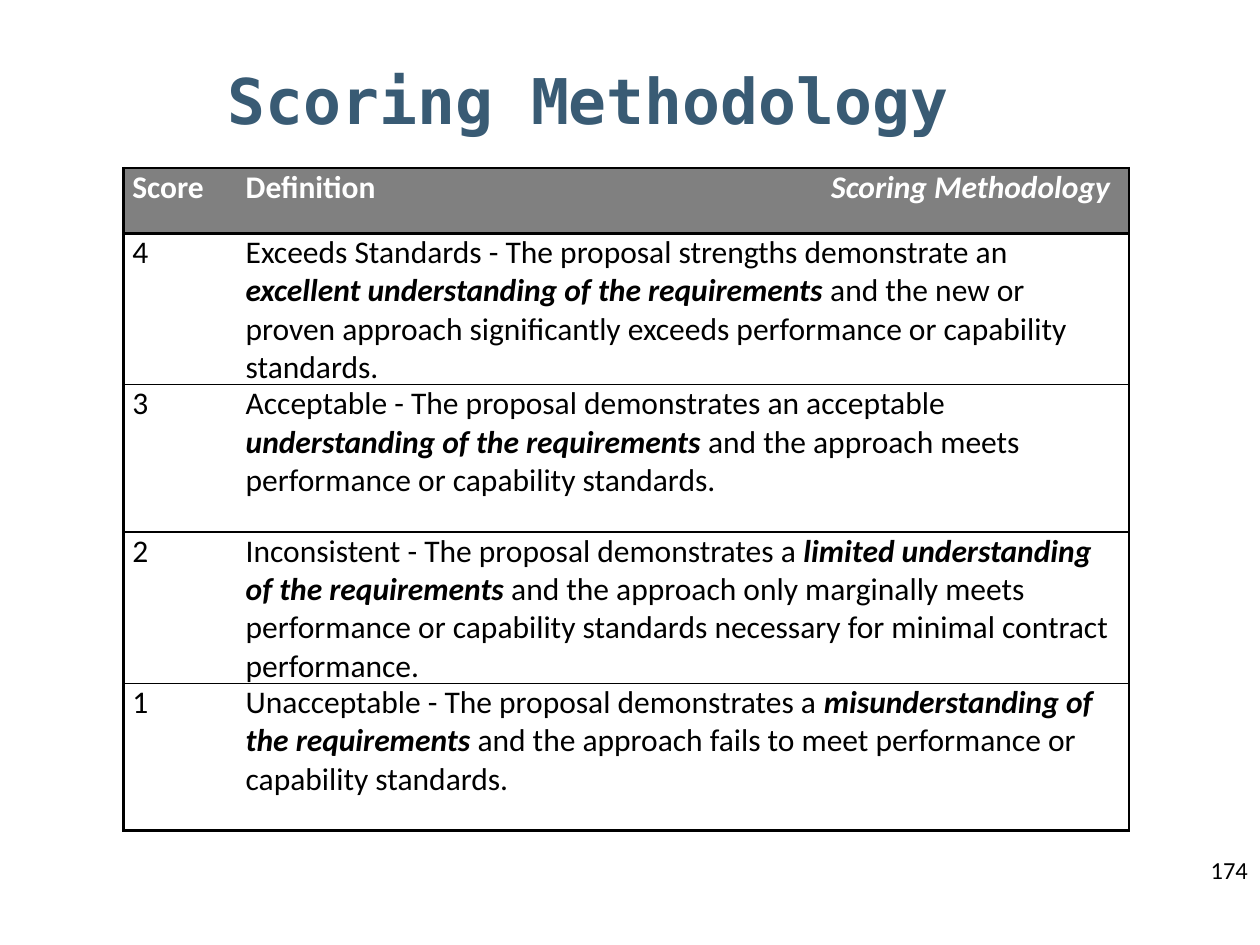
import pptx
import pptx.dml.color
import pptx.enum.text
import pptx.oxml
import pptx.oxml.ns
import pptx.util

Pt = pptx.util.Pt
RGBColor = pptx.dml.color.RGBColor
SubElement = pptx.oxml.xmlchemy.OxmlElement

BLACK = RGBColor(0x00, 0x00, 0x00)
WHITE = RGBColor(0xFF, 0xFF, 0xFF)
HEADER_GRAY = RGBColor(0x80, 0x80, 0x80)
TITLE_BLUE = RGBColor(0x39, 0x5B, 0x74)

BODY_FONT = "Calibri"
TITLE_FONT = "DejaVu Sans Mono"
OUTER, INNER = 1.5, 1
SCORE_WIDTH = 64.8
HEADER_HEIGHT, SCORE_HEIGHT = 37.4, 84.2
CAPTION_TAB = 494

SCORES = [
    ("4", "Exceeds Standards - The proposal strengths demonstrate an ",
     "excellent understanding of the requirements ",
     "and the new or proven approach significantly exceeds performance or "
     "capability standards."),
    ("3", "Acceptable - The proposal demonstrates an acceptable ",
     "understanding of the requirements ",
     "and the approach meets performance or capability standards."),
    ("2", "Inconsistent - The proposal demonstrates a ",
     "limited understanding of the requirements",
     " and the approach only marginally meets performance or capability "
     "standards necessary for minimal contract performance."),
    ("1", "Unacceptable - The proposal demonstrates a ",
     "misunderstanding of the requirements ",
     "and the approach fails to meet performance or capability standards."),
]


def place(shape, box):
    shape.left, shape.top, shape.width, shape.height = map(Pt, box)


def set_font(paragraph, name, size, color):
    paragraph.font.name = name
    paragraph.font.size = Pt(size)
    paragraph.font.color.rgb = color


def add_title(slide, box):
    title = slide.shapes.title
    place(title, box)
    frame = title.text_frame
    frame.text = "Scoring Methodology"
    frame.vertical_anchor = pptx.enum.text.MSO_ANCHOR.MIDDLE
    heading = frame.paragraphs[0]
    heading.alignment = pptx.enum.text.PP_ALIGN.CENTER
    set_font(heading, TITLE_FONT, 36, TITLE_BLUE)
    heading.font.bold = True


def set_borders(cell, **widths):
    properties = cell._tc.get_or_add_tcPr()
    for side in "LRTB":
        line = SubElement("a:ln" + side)
        properties.append(line)
        width = widths.get(side)
        if width is None:
            line.append(SubElement("a:noFill"))
            continue
        line.set("w", str(Pt(width)))
        fill = SubElement("a:solidFill")
        color = SubElement("a:srgbClr")
        color.set("val", str(BLACK))
        fill.append(color)
        line.append(fill)


def add_right_tab(paragraph, position):
    tabs = SubElement("a:tabLst")
    tab = SubElement("a:tab")
    tab.set("pos", str(Pt(position)))
    tab.set("algn", "r")
    tabs.append(tab)
    paragraph._p.get_or_add_pPr().append(tabs)


def fill_cell(cell, runs, color):
    cell.margin_left = cell.margin_right = Pt(5)
    cell.margin_top = cell.margin_bottom = 0
    paragraph = cell.text_frame.paragraphs[0]
    if any("\t" in text for text, _, _ in runs):
        add_right_tab(paragraph, CAPTION_TAB)
    set_font(paragraph, BODY_FONT, 18, color)
    for text, bold, italic in runs:
        run = paragraph.add_run()
        run.text = text
        run.font.bold = bold
        run.font.italic = italic


def add_score_table(slide, box):
    rows = [([("Score", True, False)],
             [("Definition\t", True, False),
              ("Scoring Methodology", True, True)])]
    rows += [([(score, False, False)],
              [(lead, False, False), (key, True, True), (rest, False, False)])
             for score, lead, key, rest in SCORES]

    table = slide.shapes.add_table(len(rows), 2, *map(Pt, box)).table
    table.horz_banding = False
    table.columns[0].width = Pt(SCORE_WIDTH)
    table.columns[1].width = Pt(box[2] - SCORE_WIDTH)
    last = len(rows) - 1
    for index, row in enumerate(rows):
        header = index == 0
        table.rows[index].height = Pt(HEADER_HEIGHT if header else SCORE_HEIGHT)
        top = OUTER if index <= 1 else INNER
        bottom = OUTER if index in (0, last) else INNER
        for column, runs in enumerate(row):
            cell = table.cell(index, column)
            outer_side = "LR"[column]
            set_borders(cell, T=top, B=bottom, **{outer_side: OUTER})
            if header:
                cell.fill.solid()
                cell.fill.fore_color.rgb = HEADER_GRAY
            else:
                cell.fill.background()
            fill_cell(cell, runs, WHITE if header else BLACK)


def add_page_number(slide, box):
    frame = slide.shapes.add_textbox(*map(Pt, box)).text_frame
    frame.word_wrap = True
    frame.text = "174"
    set_font(frame.paragraphs[0], BODY_FONT, 14, BLACK)


def main():
    deck = pptx.Presentation()
    deck.slide_width, deck.slide_height = Pt(720), Pt(540)
    slide = deck.slides.add_slide(deck.slide_layouts[5])
    add_page_number(slide, (684.7, 485.3, 41.8, 55))
    add_title(slide, (48, 18, 576, 78))
    add_score_table(slide, (70.6, 96, 574.6, 374.2))
    deck.save("out.pptx")


if __name__ == "__main__":
    main()
